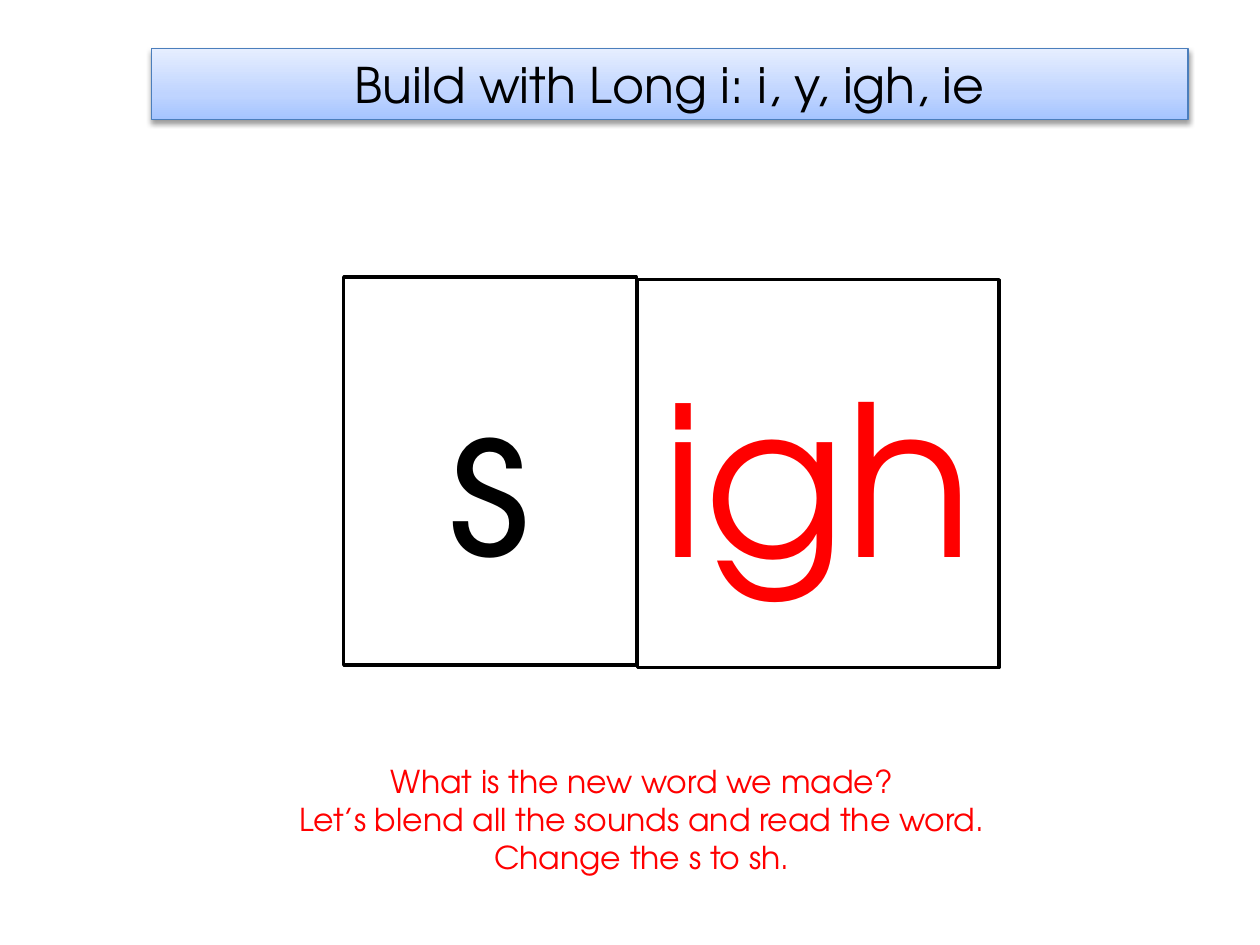
import copy

import pptx
import pptx.dml.color
import pptx.enum.shapes
import pptx.enum.text
import pptx.oxml
import pptx.oxml.ns
import pptx.util

Cm = pptx.util.Cm
Pt = pptx.util.Pt
RGB = pptx.dml.color.RGBColor.from_string
ANCHOR = pptx.enum.text.MSO_ANCHOR

theme = {
    "font": "TeX Gyre Adventor",
    "black": RGB("000000"),
    "red": RGB("FF0000"),
    "white": RGB("FFFFFF"),
    "edge": RGB("4B7EBC"),
    "stops": [(0, "A4C4FF"), (0.35, "BFD4FF"), (1, "E6EEFF")],
    "title": Pt(28),
    "sound": Pt(120),
    "prompt": Pt(18),
}


def place(shape, left, top, width, height):
    box = {"left": left, "top": top, "width": width, "height": height}
    for name, value in box.items():
        setattr(shape, name, Cm(value))


def write(shape, lines, size, color, anchor):
    """Fill the shape with centred paragraphs, one for each line."""
    frame = shape.text_frame
    frame.text = "\n".join(lines)
    layout = {
        "word_wrap": True,
        "auto_size": pptx.enum.text.MSO_AUTO_SIZE.NONE,
        "vertical_anchor": anchor,
    }
    for name, value in layout.items():
        setattr(frame, name, value)
    for para in frame.paragraphs:
        para.alignment = pptx.enum.text.PP_ALIGN.CENTER
        font = para.runs[0].font
        for name, value in {"name": theme["font"], "size": size}.items():
            setattr(font, name, value)
        font.color.rgb = color


deck = pptx.Presentation()
deck.slide_width = Cm(25.4)
deck.slide_height = Cm(19.05)
slide = deck.slides.add_slide(deck.slide_layouts[5])

# Title banner
title = slide.shapes.title
place(title, 3.05, 0.98, 20.9, 1.43)
write(title, ["Build with Long i: i, y, igh, ie"],
      theme["title"], theme["black"], ANCHOR.MIDDLE)
title.fill.gradient()
title.fill.gradient_angle = 90
props = title.element.spPr
stops = props.find(".//" + pptx.oxml.ns.qn("a:gsLst"))
stops.insert(1, copy.deepcopy(stops[0]))
for stop, (pos, color) in zip(title.fill.gradient_stops, theme["stops"]):
    stop.position = pos
    stop.color.rgb = RGB(color)
title.line.color.rgb = theme["edge"]
title.line.width = Pt(0.75)
props.append(pptx.oxml.parse_xml(
    f'<a:effectLst {pptx.oxml.ns.nsdecls("a")}>'
    f'<a:outerShdw blurRad="{Pt(3.1)}" dist="{Pt(1.6)}" dir="5400000" rotWithShape="0">'
    '<a:srgbClr val="000000"><a:alpha val="38000"/></a:srgbClr>'
    '</a:outerShdw></a:effectLst>'))

# Sound cards
cards = [
    ("s", "black", 6.93, 5.59, 5.9),
    ("igh", "red", 12.85, 5.64, 7.29),
]
for sound, color, left, top, width in cards:
    card = slide.shapes.add_shape(
        pptx.enum.shapes.MSO_SHAPE.RECTANGLE,
        Cm(left), Cm(top), Cm(width), Cm(7.82))
    card.shadow.inherit = False
    card.fill.solid()
    card.fill.fore_color.rgb = theme["white"]
    card.line.color.rgb = theme["black"]
    card.line.width = Pt(2)
    write(card, [sound], theme["sound"], theme[color], ANCHOR.MIDDLE)

# Teacher prompt
prompt = slide.shapes.add_textbox(Cm(4.09), Cm(15.24), Cm(17.7), Cm(2.57))
write(prompt, [
    "What is the new word we made?",
    "Let’s blend all the sounds and read the word.",
    "Change the s to sh.",
], theme["prompt"], theme["red"], ANCHOR.TOP)

deck.save("out.pptx")
